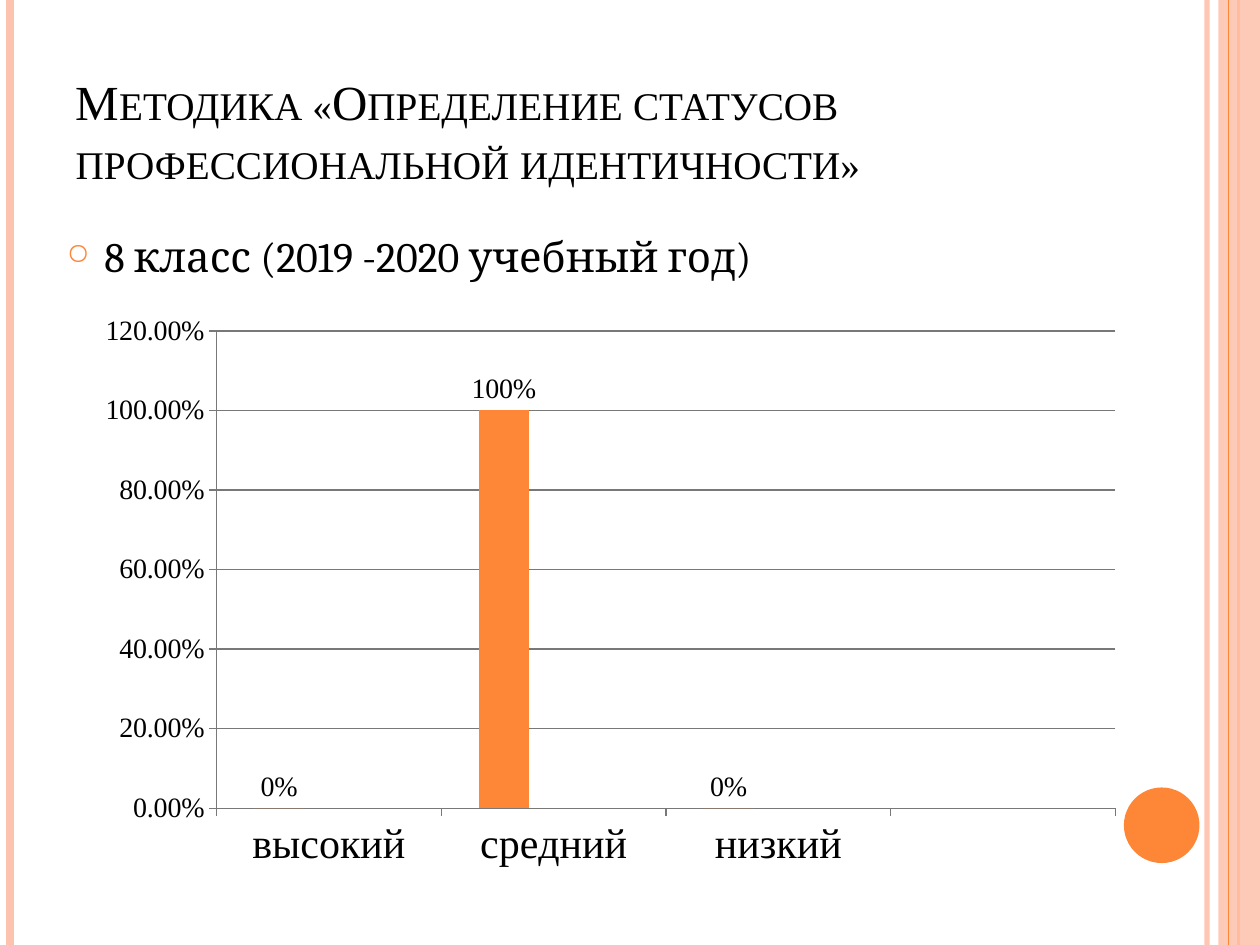
from dataclasses import dataclass

from lxml import etree
from pptx import Presentation
from pptx.chart.data import CategoryChartData
from pptx.dml.color import RGBColor
from pptx.enum.chart import XL_CHART_TYPE, XL_LABEL_POSITION, XL_TICK_MARK
from pptx.enum.shapes import MSO_CONNECTOR, MSO_SHAPE
from pptx.enum.text import MSO_ANCHOR, MSO_AUTO_SIZE, PP_ALIGN
from pptx.oxml.ns import qn
from pptx.util import Inches, Pt

STRAIGHT = MSO_CONNECTOR.STRAIGHT
RECTANGLE = MSO_SHAPE.RECTANGLE
OVAL = MSO_SHAPE.OVAL
COLUMNS = XL_CHART_TYPE.COLUMN_CLUSTERED
OUTSIDE_END = XL_LABEL_POSITION.OUTSIDE_END
TICK_OUTSIDE = XL_TICK_MARK.OUTSIDE
BOTTOM = MSO_ANCHOR.BOTTOM
LEFT = PP_ALIGN.LEFT
NO_AUTOFIT = MSO_AUTO_SIZE.NONE


@dataclass(frozen=True)
class Theme:
    text: RGBColor = RGBColor(0, 0, 0)
    accent: RGBColor = RGBColor(0xFE, 0x86, 0x37)
    pale: RGBColor = RGBColor(0xFE, 0xC3, 0xAE)
    blue: RGBColor = RGBColor(0x75, 0x98, 0xD9)
    red: RGBColor = RGBColor(0xB3, 0x2C, 0x16)
    axis: RGBColor = RGBColor(0x78, 0x78, 0x78)
    serif: str = "Times New Roman"
    body_font: str = "Cambria"
    title_size: int = 28
    body_size: int = 24
    category_size: int = 24
    chart_size: int = 16


THEME = Theme()
PAGE_HEIGHT = 7.5


def style_font(font, name, size):
    for attribute, value in {"name": name, "size": Pt(size), "bold": False}.items():
        setattr(font, attribute, value)
    font.color.rgb = THEME.text


def set_alpha(color_format_parent, percent):
    """Make the solid colour inside an XML element partly transparent."""
    color = next(color_format_parent.iter(qn("a:srgbClr")))
    etree.SubElement(color, qn("a:alpha")).set("val", str(percent * 1000))


def add_stripe(page, x, color, width, alpha=100):
    """Draw a vertical line over the full height of the page."""
    stripe = page.shapes.add_connector(
        STRAIGHT, Inches(x), Inches(0), Inches(x), Inches(PAGE_HEIGHT))
    stripe.line.color.rgb = color
    stripe.line.width = Pt(width)
    properties = stripe._element.spPr
    if alpha < 100:
        set_alpha(properties, alpha)
    etree.SubElement(properties, qn("a:effectLst"))


def add_plain_shape(page, kind, box, color, alpha=100):
    shape = page.shapes.add_shape(kind, *map(Inches, box))
    shape.shadow.inherit = False
    shape.fill.solid()
    shape.fill.fore_color.rgb = color
    shape.line.fill.background()
    if alpha < 100:
        set_alpha(shape._element.spPr, alpha)


def add_decoration(page):
    add_stripe(page, 9.58, THEME.pale, 3, alpha=93)
    add_stripe(page, 0.08, THEME.pale, 4.5)
    add_stripe(page, 9.83, THEME.accent, 1.5)
    add_plain_shape(page, RECTANGLE, (9.67, 0, 0.33, PAGE_HEIGHT), THEME.pale, alpha=87)
    add_stripe(page, 9.75, THEME.accent, 0.75)
    add_plain_shape(page, OVAL, (8.92, 6.25, 0.6, 0.6), THEME.accent)


def fill_title(page, text):
    title = page.shapes.title
    places = {"left": 0.5, "top": 0.3, "width": 8.17, "height": 1.25}
    for attribute, value in places.items():
        setattr(title, attribute, Inches(value))
    frame = title.text_frame
    frame.text = text
    settings = {"vertical_anchor": BOTTOM, "auto_size": NO_AUTOFIT, "word_wrap": True}
    for attribute, value in settings.items():
        setattr(frame, attribute, value)
    para = frame.paragraphs[0]
    para.alignment = LEFT
    span = para.runs[0]
    style_font(span.font, THEME.serif, THEME.title_size)
    span.font._element.set("cap", "small")


def add_bullet_text(page, text):
    box = page.shapes.add_textbox(*map(Inches, (0.43, 1.78, 8.17, 0.6)))
    box.text_frame.word_wrap = True
    para = box.text_frame.paragraphs[0]
    para.space_before = Pt(6)
    span = para.add_run()
    span.text = text
    style_font(span.font, THEME.body_font, THEME.body_size)
    properties = para._p.get_or_add_pPr()
    properties.set("marL", str(Inches(0.3)))
    properties.set("indent", str(-Inches(0.3)))
    color = etree.SubElement(properties, qn("a:buClr"))
    etree.SubElement(color, qn("a:srgbClr")).set("val", str(THEME.accent))
    etree.SubElement(properties, qn("a:buSzPct")).set("val", "70000")
    etree.SubElement(properties, qn("a:buChar")).set("char", "○")


def style_axis(axis, size):
    style_font(axis.tick_labels.font, THEME.serif, size)
    axis.major_tick_mark = TICK_OUTSIDE
    axis.format.line.color.rgb = THEME.axis


def add_level_chart(page):
    data = CategoryChartData(number_format="0.00%")
    data.categories = ["высокий", "средний", "низкий", ""]
    data.add_series("Series 1", (0, 1, 0, None))
    data.add_series("Series 2", (None,) * 4)
    data.add_series("Series 3", (None,) * 4)
    box = map(Inches, (0.67, 2.41, 8.35, 4.57))
    chart = page.shapes.add_chart(COLUMNS, *box, data).chart
    chart.has_legend = False
    chart.has_title = False
    style_font(chart.font, THEME.serif, THEME.chart_size)

    style_axis(chart.category_axis, THEME.category_size)
    values = chart.value_axis
    style_axis(values, THEME.chart_size)
    scale = {"minimum_scale": 0, "maximum_scale": 1.2, "major_unit": 0.2,
             "has_major_gridlines": True}
    for attribute, value in scale.items():
        setattr(values, attribute, value)
    values.major_gridlines.format.line.color.rgb = THEME.axis
    values.tick_labels.number_format = "0.00%"
    values.tick_labels.number_format_is_linked = False

    plot = chart.plots[0]
    plot.gap_width = 150
    plot.overlap = 0
    plot.vary_by_categories = False
    for series, color in zip(plot.series, (THEME.accent, THEME.blue, THEME.red)):
        series.format.fill.solid()
        series.format.fill.fore_color.rgb = color
    labels = plot.series[0].data_labels
    settings = {"show_value": True, "number_format": "0%",
                "number_format_is_linked": False, "position": OUTSIDE_END}
    for attribute, value in settings.items():
        setattr(labels, attribute, value)
    style_font(labels.font, THEME.serif, THEME.chart_size)


def main():
    deck = Presentation()
    deck.slide_width = Inches(10)
    deck.slide_height = Inches(PAGE_HEIGHT)
    page = deck.slides.add_slide(deck.slide_layouts[5])
    add_decoration(page)
    fill_title(page, "Методика «Определение статусов профессиональной идентичности»")
    add_bullet_text(page, "8 класс (2019 -2020 учебный год)")
    add_level_chart(page)
    deck.save("out.pptx")


if __name__ == "__main__":
    main()
